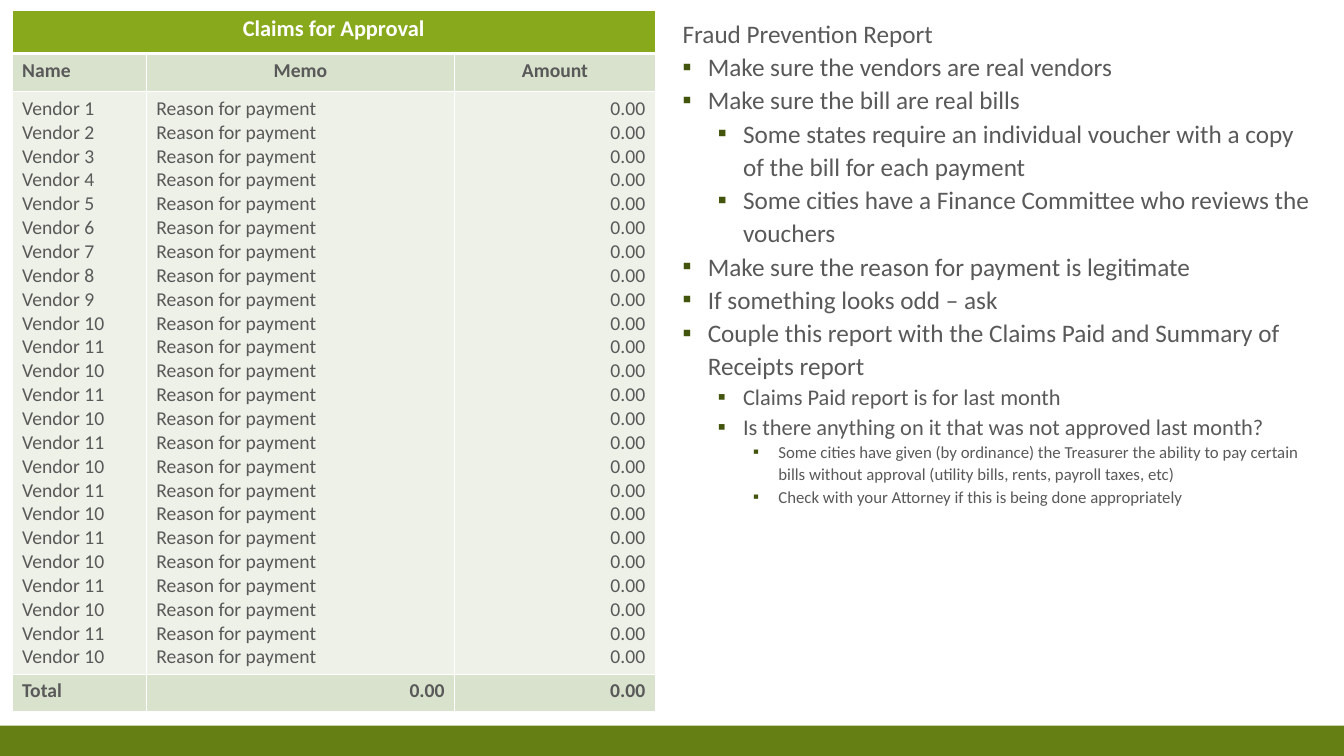
from lxml.etree import SubElement
from pptx import Presentation
from pptx.dml.color import RGBColor
from pptx.enum.shapes import MSO_SHAPE
from pptx.enum.text import MSO_ANCHOR, MSO_AUTO_SIZE, PP_ALIGN
from pptx.oxml import parse_xml
from pptx.oxml.ns import nsdecls, qn
from pptx.util import Inches, Pt

COLORS = {
    "band": "657F14", "header": "87A91B", "label": "D9E2CD",
    "body": "EDF1E8", "text": "595959", "bullet": "43540D", "white": "FFFFFF",
}
LEFT, CENTER, RIGHT = PP_ALIGN.LEFT, PP_ALIGN.CENTER, PP_ALIGN.RIGHT

VENDORS = [f"Vendor {n}" for n in [*range(1, 12), *[10, 11] * 6, 10]]
COUNT = len(VENDORS)
COLUMNS = [1.33, 3.06, 1.99]
ROWS = [
    (0.43, "header", 16, True, [(["Claims for Approval"], CENTER)]),
    (0.38, "label", 14, True,
     [(["Name"], LEFT), (["Memo"], CENTER), (["Amount"], CENTER)]),
    (5.77, "body", 14, False,
     [(VENDORS, LEFT), (["Reason for payment"] * COUNT, LEFT), (["0.00"] * COUNT, RIGHT)]),
    (0.37, "label", 14, True,
     [(["Total"], LEFT), (["0.00"], RIGHT), (["0.00"], RIGHT)]),
]
REPORT = [
    (None, 18, "Fraud Prevention Report"),
    (0, 18, "Make sure the vendors are real vendors"),
    (0, 18, "Make sure the bill are real bills"),
    (1, 18, "Some states require an individual voucher with a copy of the bill for each payment"),
    (1, 18, "Some cities have a Finance Committee who reviews the vouchers"),
    (0, 18, "Make sure the reason for payment is legitimate"),
    (0, 18, "If something looks odd – ask"),
    (0, 18, "Couple this report with the Claims Paid and Summary of Receipts report"),
    (1, 16, "Claims Paid report is for last month"),
    (1, 16, "Is there anything on it that was not approved last month?"),
    (2, 12, "Some cities have given (by ordinance) the Treasurer the ability to pay certain "
            "bills without approval (utility bills, rents, payroll taxes, etc)"),
    (2, 12, "Check with your Attorney if this is being done appropriately"),
]


class SlideBuilder:
    """Holds the style and the current slide."""

    def __init__(self, prs, font):
        self.font = font
        self.s = prs.slides.add_slide(prs.slide_layouts[1])
        title = self.s.shapes.title
        title.element.getparent().remove(title.element)

    def color(self, name):
        return RGBColor.from_string(COLORS[name])

    def run(self, p, text, size, color="text", bold=False):
        r = p.add_run()
        r.text = text
        r.font.name, r.font.size, r.font.bold = self.font, Pt(size), bold
        r.font.color.rgb = self.color(color)

    def rect(self, x, y, w, h, fill):
        sp = self.s.shapes.add_shape(
            MSO_SHAPE.RECTANGLE, Inches(x), Inches(y), Inches(w), Inches(h))
        sp.shadow.inherit = False
        sp.fill.solid()
        sp.fill.fore_color.rgb = self.color(fill)
        sp.line.fill.background()

    def borders(self, cell, top, bottom):
        tcPr = cell._tc.get_or_add_tcPr()
        for i, (side, width) in enumerate(zip("LRTB", (1, 1, top, bottom))):
            tcPr.insert(i, parse_xml(
                f'<a:ln{side} {nsdecls("a")} w="{Pt(width)}"><a:solidFill>'
                f'<a:srgbClr val="{COLORS["white"]}"/></a:solidFill></a:ln{side}>'))

    def table(self, x, y, columns, rows):
        tbl = self.s.shapes.add_table(
            len(rows), len(columns), Inches(x), Inches(y),
            Inches(sum(columns)), Inches(sum(row[0] for row in rows))).table
        for col, width in zip(tbl.columns, columns):
            col.width = Inches(width)
        for i, (height, fill, size, bold, contents) in enumerate(rows):
            tbl.rows[i].height = Inches(height)
            for cell in tbl.rows[i].cells:
                cell.fill.solid()
                cell.fill.fore_color.rgb = self.color(fill)
                self.borders(cell, 3 if i == 1 else 1, 3 if i == 0 else 1)
            for j, (lines, align) in enumerate(contents):
                tf = tbl.cell(i, j).text_frame
                for n, line in enumerate(lines):
                    p = tf.add_paragraph() if n else tf.paragraphs[0]
                    p.alignment = align
                    self.run(p, line, size, "white" if fill == "header" else "text", bold)
        tbl.cell(0, 0).merge(tbl.cell(0, len(columns) - 1))

    def bullet(self, p, level):
        pPr = p._p.get_or_add_pPr()
        if level is None:
            pPr.set("marL", str(Inches(0.05)))
            pPr.set("indent", "0")
            SubElement(pPr, qn("a:buNone"))
            return
        p.level = level
        pPr.set("marL", str(Inches(0.3 + 0.35 * level)))
        pPr.set("indent", str(Inches(-0.25)))
        clr = SubElement(pPr, qn("a:buClr"))
        SubElement(clr, qn("a:srgbClr"), val=COLORS["bullet"])
        SubElement(pPr, qn("a:buFont"), typeface=self.font)
        SubElement(pPr, qn("a:buChar"), char="▪")

    def body(self, x, y, w, h, items):
        sp = self.s.placeholders[1]
        sp.left, sp.top, sp.width, sp.height = (Inches(v) for v in (x, y, w, h))
        tf = sp.text_frame
        tf.word_wrap, tf.auto_size = True, MSO_AUTO_SIZE.NONE
        tf.vertical_anchor = MSO_ANCHOR.TOP
        for n, (level, size, text) in enumerate(items):
            p = tf.add_paragraph() if n else tf.paragraphs[0]
            p.alignment, p.line_spacing = LEFT, 1.1
            p.space_before = p.space_after = Pt(0)
            self.bullet(p, level)
            self.run(p, text, size)


def main():
    prs = Presentation()
    prs.slide_width, prs.slide_height = Inches(13.33), Inches(7.5)
    slide = SlideBuilder(prs, "Calibri")
    slide.rect(0, 7.2, 13.33, 0.3, "band")
    slide.table(0.12, 0.1, COLUMNS, ROWS)
    slide.body(6.62, 0.1, 6.5, 7.32, REPORT)
    prs.save("out.pptx")


if __name__ == "__main__":
    main()
